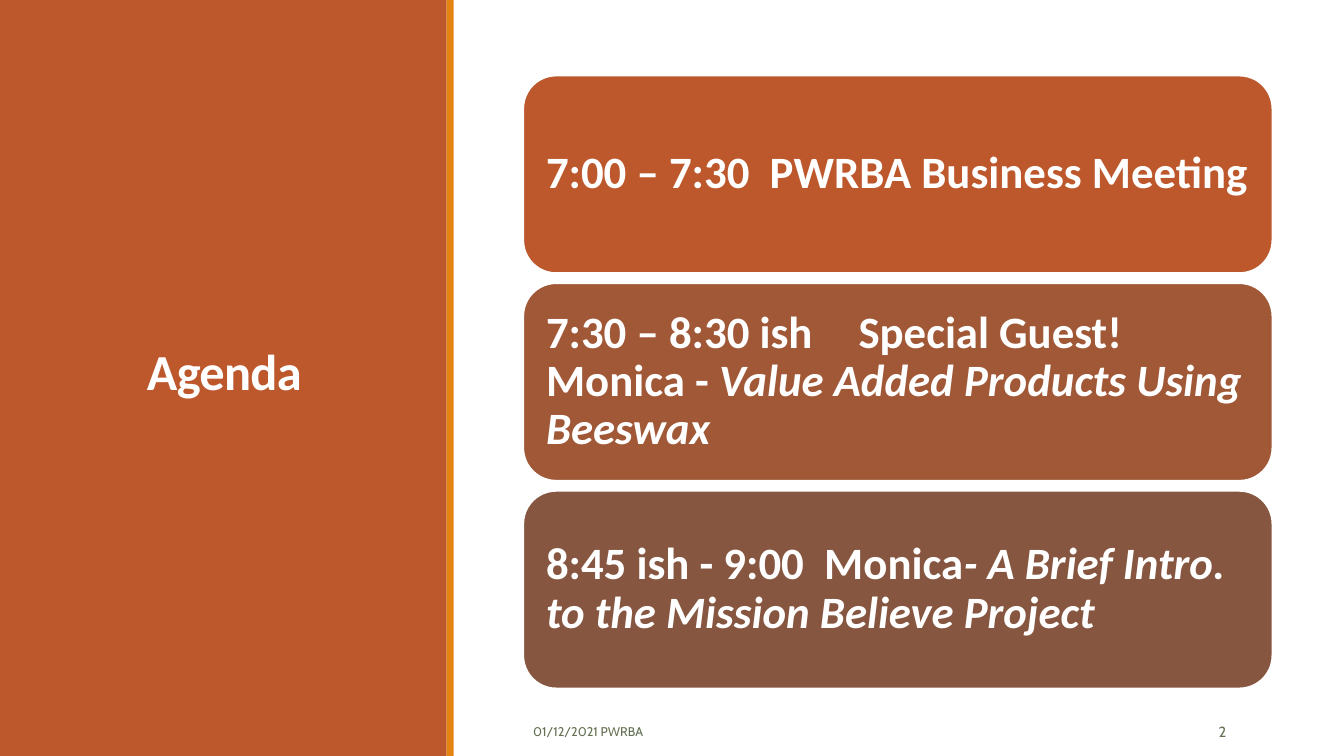
from pptx import Presentation
from pptx.dml.color import RGBColor
from pptx.enum.shapes import MSO_SHAPE
from pptx.enum.text import MSO_ANCHOR, MSO_AUTO_SIZE, PP_ALIGN
from pptx.oxml.ns import qn
from pptx.util import Inches, Pt
from lxml import etree

RECTANGLE, ROUNDED = MSO_SHAPE.RECTANGLE, MSO_SHAPE.ROUNDED_RECTANGLE
MIDDLE = MSO_ANCHOR.MIDDLE
LEFT, CENTER, RIGHT = PP_ALIGN.LEFT, PP_ALIGN.CENTER, PP_ALIGN.RIGHT

WHITE = RGBColor(0xFF, 0xFF, 0xFF)
RUST = RGBColor(0xBD, 0x58, 0x2C)
SIENNA = RGBColor(0xA0, 0x58, 0x37)
BROWN = RGBColor(0x86, 0x56, 0x40)
ORANGE = RGBColor(0xE4, 0x83, 0x12)
OLIVE = RGBColor(0x63, 0x70, 0x52)

SLIDE_WIDTH, SLIDE_HEIGHT = 13.33, 7.5
PANEL_WIDTH, STRIPE_WIDTH = 4.43, 0.07
CARD_GAP = 0.1
GUEST_TAB = 3.1

# Each card: fill, then runs as (text, italic)
AGENDA = [
    (RUST, [("7:00 – 7:30  PWRBA Business Meeting", False)]),
    (SIENNA, [("7:30 – 8:30 ish\tSpecial Guest! Monica - ", False),
              ("Value Added Products Using Beeswax", True)]),
    (BROWN, [("8:45 ish - 9:00  Monica", False),
             ("- A Brief Intro. to the Mission Believe Project", True)]),
]


def add_box(slide, kind, box, fill):
    shape = slide.shapes.add_shape(kind, *map(Inches, box))
    shape.shadow.inherit = False
    shape.fill.solid()
    shape.fill.fore_color.rgb = fill
    shape.line.fill.background()
    return shape


def add_run(paragraph, text, size, color, font="Calibri", bold=False, italic=False):
    run = paragraph.add_run()
    run.text = text
    run.font.name = font
    run.font.size = Pt(size)
    run.font.bold = bold
    run.font.italic = italic
    run.font.color.rgb = color
    return run


def add_title_panel(slide, box):
    left, top, width, height = box
    add_box(slide, RECTANGLE, box, RUST)
    add_box(slide, RECTANGLE, (left + width, top, STRIPE_WIDTH, height), ORANGE)

    title = slide.shapes.title
    slide.shapes._spTree.append(title._element)  # bring in front of the panel
    title.left, title.top = Inches(left + 0.54), Inches(top + 0.57)
    title.width, title.height = Inches(width - 1.06), Inches(height - 1.19)
    frame = title.text_frame
    frame.auto_size = MSO_AUTO_SIZE.NONE
    frame.vertical_anchor = MIDDLE
    paragraph = frame.paragraphs[0]
    paragraph.alignment = CENTER
    paragraph.line_spacing = 0.85
    run = add_run(paragraph, "Agenda", 36, WHITE, bold=True)
    run.font._element.set("spc", "-50")


def add_tab_stop(paragraph, position):
    tabs = etree.SubElement(paragraph._p.get_or_add_pPr(), qn("a:tabLst"))
    etree.SubElement(tabs, qn("a:tab"), pos=str(Inches(position)), algn="l")


def add_card(slide, box, fill, runs):
    card = add_box(slide, ROUNDED, box, fill)
    card.line.color.rgb = WHITE
    card.line.width = Pt(1.25)
    frame = card.text_frame
    frame.word_wrap = True
    frame.vertical_anchor = MIDDLE
    frame.margin_left = frame.margin_top = frame.margin_bottom = Inches(0.13)
    frame.margin_right = Inches(0.1)
    paragraph = frame.paragraphs[0]
    paragraph.alignment = LEFT
    paragraph.line_spacing = 0.9
    add_tab_stop(paragraph, GUEST_TAB)
    for text, italic in runs:
        add_run(paragraph, text, 32, WHITE, bold=True, italic=italic)


def add_agenda(slide, box):
    left, top, width, height = box
    card_height = (height - CARD_GAP * (len(AGENDA) - 1)) / len(AGENDA)
    for row, (fill, runs) in enumerate(AGENDA):
        card_top = top + row * (card_height + CARD_GAP)
        add_card(slide, (left, card_top, width, card_height), fill, runs)


def add_footer_text(slide, box, text, size, alignment):
    frame = slide.shapes.add_textbox(*map(Inches, box)).text_frame
    frame.word_wrap = True
    frame.vertical_anchor = MIDDLE
    paragraph = frame.paragraphs[0]
    paragraph.alignment = alignment
    add_run(paragraph, text, size, OLIVE, font="Cabin")


def add_footer(slide, box):
    left, top, width, height = box
    number_width = 1.19
    add_footer_text(slide, (left, top, 5.58, height), "01/12/2021 PWRBA", 9, LEFT)
    add_footer_text(slide, (left + width - number_width, top, number_width, height),
                    "2", 10.5, RIGHT)


def main():
    presentation = Presentation()
    presentation.slide_width = Inches(SLIDE_WIDTH)
    presentation.slide_height = Inches(SLIDE_HEIGHT)
    slide = presentation.slides.add_slide(presentation.slide_layouts[5])
    add_title_panel(slide, (0, 0, PANEL_WIDTH, SLIDE_HEIGHT))
    add_footer(slide, (5.19, 7.06, 7.07, 0.4))
    add_agenda(slide, (5.19, 0.75, 7.43, 6.08))
    presentation.save("out.pptx")


if __name__ == "__main__":
    main()
